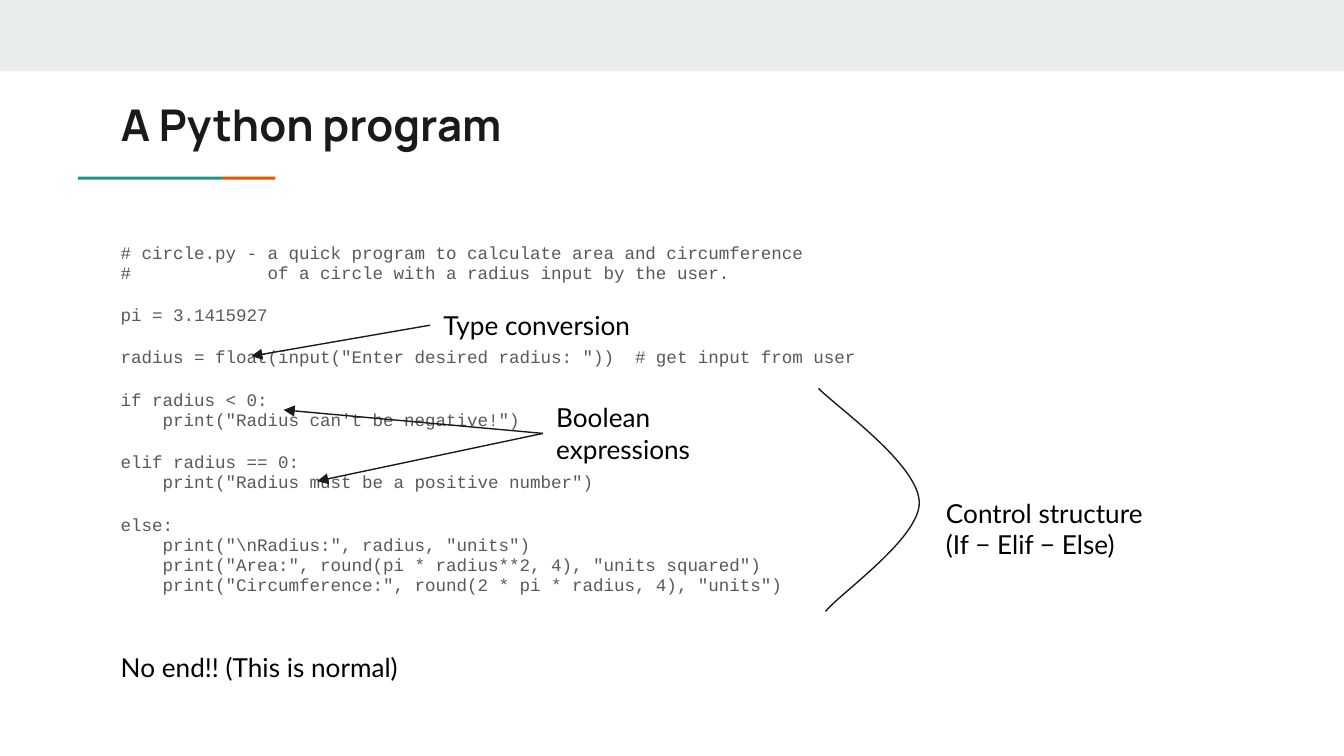
from lxml import etree
from pptx import Presentation
from pptx.dml.color import RGBColor
from pptx.enum.shapes import MSO_CONNECTOR, MSO_SHAPE
from pptx.enum.text import MSO_ANCHOR, PP_ALIGN
from pptx.oxml.ns import qn
from pptx.util import Inches, Pt

STRAIGHT = MSO_CONNECTOR.STRAIGHT
RECTANGLE = MSO_SHAPE.RECTANGLE
LEFT = PP_ALIGN.LEFT
TOP, MIDDLE = MSO_ANCHOR.TOP, MSO_ANCHOR.MIDDLE
LEFT_SIDE = 1

INK = RGBColor(0x1A, 0x1A, 0x1A)
CODE_GREY = RGBColor(0x59, 0x59, 0x59)
BLACK = RGBColor(0, 0, 0)
BAND = RGBColor(0xE9, 0xED, 0xEE)
TEAL = RGBColor(0x1A, 0x99, 0x88)
ORANGE = RGBColor(0xEB, 0x56, 0x00)

WIDTH = Inches(10)
HEIGHT = WIDTH * 9 // 16
CELL = WIDTH / 100
MARGIN, TEXT_COLUMNS = 8, 84.1

CODE_BLOCKS = [
    "# circle.py - a quick program to calculate area and circumference\n"
    "#             of a circle with a radius input by the user.",
    "pi = 3.1415927",
    'radius = float(input("Enter desired radius: "))  # get input from user',
    'if radius < 0:\n    print("Radius can\'t be negative!")',
    'elif radius == 0:\n    print("Radius must be a positive number")',
    'else:\n    print("\\nRadius:", radius, "units")\n'
    '    print("Area:", round(pi * radius**2, 4), "units squared")\n'
    '    print("Circumference:", round(2 * pi * radius, 4), "units")',
]

CALLOUTS = [
    ("Control structure (If − Elif − Else)", (69.4, 36, 17.9, 6.7), []),
    ("Boolean expressions", (40.4, 28.9, 16.3, 6.7), [(21.1, 30.5), (23.6, 35.8)]),
    ("Type conversion", (32, 22, 16.3, 4.4), [(18.7, 26.5)]),
    ("No end!! (This is normal)", (MARGIN, 47.5, 23.7, 4.4), []),
]

BRACE_BOX = (60.9, 28.9, 7.5, 16.6)
BRACE_CURVES = [
    [(0, 0), (0.17, 0.08), (0.99, 0.34), (1, 0.51)],
    [(1, 0.51), (1.01, 0.67), (0.21, 0.92), (0.07, 1)],
]


def cells(*counts):
    """Turn counts of grid cells into slide lengths."""
    return [round(count * CELL) for count in counts]


def style_text(para, font_name, size, color, bold=False):
    """Format every run and line break of a paragraph."""
    for span in para.runs:
        span.font.name = font_name
        span.font.size = Pt(size)
        span.font.bold = bold
        span.font.color.rgb = color
    for line_break in para._p.findall(qn("a:br")):
        properties = etree.SubElement(line_break, qn("a:rPr"))
        properties.set("sz", str(round(size * 100)))
        etree.SubElement(properties, qn("a:latin")).set("typeface", font_name)


def set_frame(frame, anchor=TOP):
    """Give a text frame wrapping, equal insets and an anchor."""
    frame.word_wrap = True
    frame.vertical_anchor = anchor
    frame.margin_left = frame.margin_right = round(CELL)
    frame.margin_top = frame.margin_bottom = round(CELL)


def add_bar(page, box, color):
    """Add a plain filled rectangle."""
    bar = page.shapes.add_shape(RECTANGLE, *cells(*box))
    bar.shadow.inherit = False
    bar.fill.solid()
    bar.fill.fore_color.rgb = color
    bar.line.fill.background()


def add_accent(page, box):
    """Add the underline, split between teal and orange."""
    left, top, width, height = box
    teal_width = width * 0.73
    add_bar(page, (left, top, teal_width, height), TEAL)
    add_bar(page, (left + teal_width, top, width - teal_width, height), ORANGE)


def add_title(page, box):
    """Place and format the title placeholder."""
    title = page.shapes.title
    title.left, title.top, title.width, title.height = cells(*box)
    title.text_frame.text = "A Python program"
    set_frame(title.text_frame, MIDDLE)
    para = title.text_frame.paragraphs[0]
    para.alignment = LEFT
    style_text(para, "Manrope", 23.4, INK, bold=True)


def add_code(page, box):
    """Add the program listing, one paragraph per block."""
    frame = page.shapes.add_textbox(*cells(*box)).text_frame
    set_frame(frame)
    for index, block in enumerate(CODE_BLOCKS):
        para = frame.add_paragraph() if index else frame.paragraphs[0]
        para.text = block
        para.line_spacing = 0.95
        para.space_before = Pt(12 if index else 0)
        style_text(para, "Courier New", 9.4, CODE_GREY)


def add_arrow(page, label, target):
    """Point from the left side of a label to a place in the code."""
    arrow = page.shapes.add_connector(STRAIGHT, label.left, label.top, *cells(*target))
    arrow.begin_connect(label, LEFT_SIDE)
    arrow.line.color.rgb = INK
    arrow.line.width = Pt(0.75)
    etree.SubElement(arrow.line._get_or_add_ln(), qn("a:tailEnd")).set("type", "triangle")
    etree.SubElement(arrow._element.spPr, qn("a:effectLst"))


def add_callout(page, text, box, targets):
    """Add a note with arrows to its targets."""
    label = page.shapes.add_textbox(*cells(*box))
    label.text_frame.text = text
    set_frame(label.text_frame)
    style_text(label.text_frame.paragraphs[0], "Lato", 14, BLACK)
    for target in targets:
        add_arrow(page, label, target)


def curve_point(controls, share):
    """Return the point at a share of a cubic curve."""
    rest = 1 - share
    weights = (rest**3, 3 * rest**2 * share, 3 * rest * share**2, share**3)
    return [sum(w * point[axis] for w, point in zip(weights, controls)) for axis in (0, 1)]


def add_brace(page, box, steps=24):
    """Draw the curved brace beside the control structure."""
    left, top, width, height = box
    points = [
        cells(left + x * width, top + y * height)
        for controls in BRACE_CURVES
        for x, y in (curve_point(controls, step / steps) for step in range(steps + 1))
    ]
    builder = page.shapes.build_freeform(*points[0])
    builder.add_line_segments(points[1:], close=False)
    brace = builder.convert_to_shape()
    brace.shadow.inherit = False
    brace.fill.background()
    brace.line.color.rgb = INK
    brace.line.width = Pt(0.75)


def main():
    """Build and save the slide."""
    deck = Presentation()
    deck.slide_width, deck.slide_height = WIDTH, HEIGHT
    page = deck.slides.add_slide(deck.slide_layouts[5])
    add_bar(page, (0, 0, 100, 5.3), BAND)
    add_accent(page, (5.8, 13.15, 14.7, 0.22))
    add_title(page, (MARGIN, 6.3, TEXT_COLUMNS, 5.9))
    add_code(page, (MARGIN, 17.1, TEXT_COLUMNS, 30.4))
    add_brace(page, BRACE_BOX)
    for text, box, targets in CALLOUTS:
        add_callout(page, text, box, targets)
    deck.save("out.pptx")


if __name__ == "__main__":
    main()
